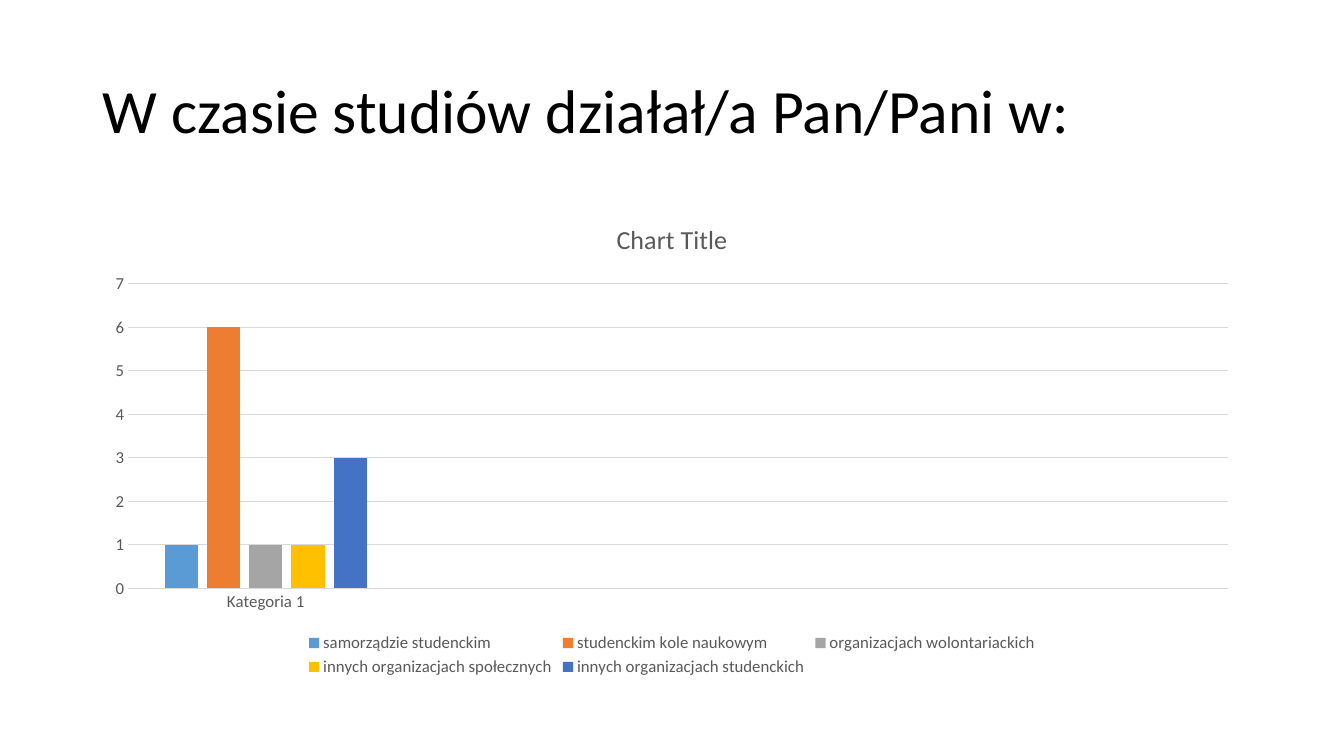
"""Build a slide with a column chart of student activities."""
import pptx
import pptx.chart.data
import pptx.dml.color
import pptx.enum.chart
import pptx.enum.text
import pptx.util

Cm, Pt = pptx.util.Cm, pptx.util.Pt
RGBColor = pptx.dml.color.RGBColor

TITLE = "W czasie studiów działał/a Pan/Pani w:"
CHART_TITLE = "Chart Title"
FONT = "Calibri"
BLACK = RGBColor(0x00, 0x00, 0x00)
GREY = RGBColor(0x59, 0x59, 0x59)
LIGHT_GREY = RGBColor(0xD9, 0xD9, 0xD9)
CATEGORIES = ["Kategoria 1", "", "", ""]
SERIES = [
    ("samorządzie studenckim", 1, RGBColor(0x5B, 0x9B, 0xD5)),
    ("studenckim kole naukowym", 6, RGBColor(0xED, 0x7D, 0x31)),
    ("organizacjach wolontariackich", 1, RGBColor(0xA5, 0xA5, 0xA5)),
    ("innych organizacjach społecznych", 1, RGBColor(0xFF, 0xC0, 0x00)),
    ("innych organizacjach studenckich", 3, RGBColor(0x44, 0x72, 0xC4)),
]
LEFT, WIDTH = Cm(2.33), Cm(29.21)


def set_font(font, size, color):
    font.name, font.size, font.bold = FONT, Pt(size), False
    font.color.rgb = color


def set_line(line):
    line.color.rgb = LIGHT_GREY
    line.width = Pt(0.75)


def add_title(s):
    title = s.shapes.title
    title.left, title.top, title.width, title.height = LEFT, Cm(1.01), WIDTH, Cm(3.68)
    tf = title.text_frame
    tf.text = TITLE
    tf.word_wrap = True
    tf.vertical_anchor = pptx.enum.text.MSO_ANCHOR.MIDDLE
    p = tf.paragraphs[0]
    p.alignment = pptx.enum.text.PP_ALIGN.LEFT
    p.line_spacing = 0.9
    set_font(p.font, 44, BLACK)


def add_activity_chart(s):
    data = pptx.chart.data.CategoryChartData()
    data.categories = CATEGORIES
    for name, value, _ in SERIES:
        data.add_series(name, [value] + [None] * (len(CATEGORIES) - 1))
    chart = s.shapes.add_chart(
        pptx.enum.chart.XL_CHART_TYPE.COLUMN_CLUSTERED,
        LEFT, Cm(5.07), WIDTH, Cm(12.09), data).chart
    set_font(chart.font, 10, BLACK)

    chart.has_title = True
    tf = chart.chart_title.text_frame
    tf.text = CHART_TITLE
    set_font(tf.paragraphs[0].font, 18.6, GREY)
    chart.chart_title.include_in_layout = False

    chart.has_legend = True
    chart.legend.position = pptx.enum.chart.XL_LEGEND_POSITION.BOTTOM
    chart.legend.include_in_layout = False
    set_font(chart.legend.font, 12, GREY)

    for axis in (chart.category_axis, chart.value_axis):
        axis.major_tick_mark = pptx.enum.chart.XL_TICK_MARK.NONE
        axis.minor_tick_mark = pptx.enum.chart.XL_TICK_MARK.NONE
        set_font(axis.tick_labels.font, 12, GREY)
    set_line(chart.category_axis.format.line)
    chart.value_axis.format.line.fill.background()
    set_line(chart.value_axis.major_gridlines.format.line)
    chart.value_axis.minimum_scale = 0
    chart.value_axis.maximum_scale = 7
    chart.value_axis.major_unit = 1

    plot = chart.plots[0]
    plot.gap_width, plot.overlap, plot.vary_by_categories = 219, -27, False
    for series, (_, _, color) in zip(plot.series, SERIES):
        series.format.fill.solid()
        series.format.fill.fore_color.rgb = color


def main():
    prs = pptx.Presentation()
    prs.slide_width, prs.slide_height = Cm(33.87), Cm(19.05)
    s = prs.slides.add_slide(prs.slide_layouts[5])
    add_title(s)
    add_activity_chart(s)
    prs.save("out.pptx")


if __name__ == "__main__":
    main()
